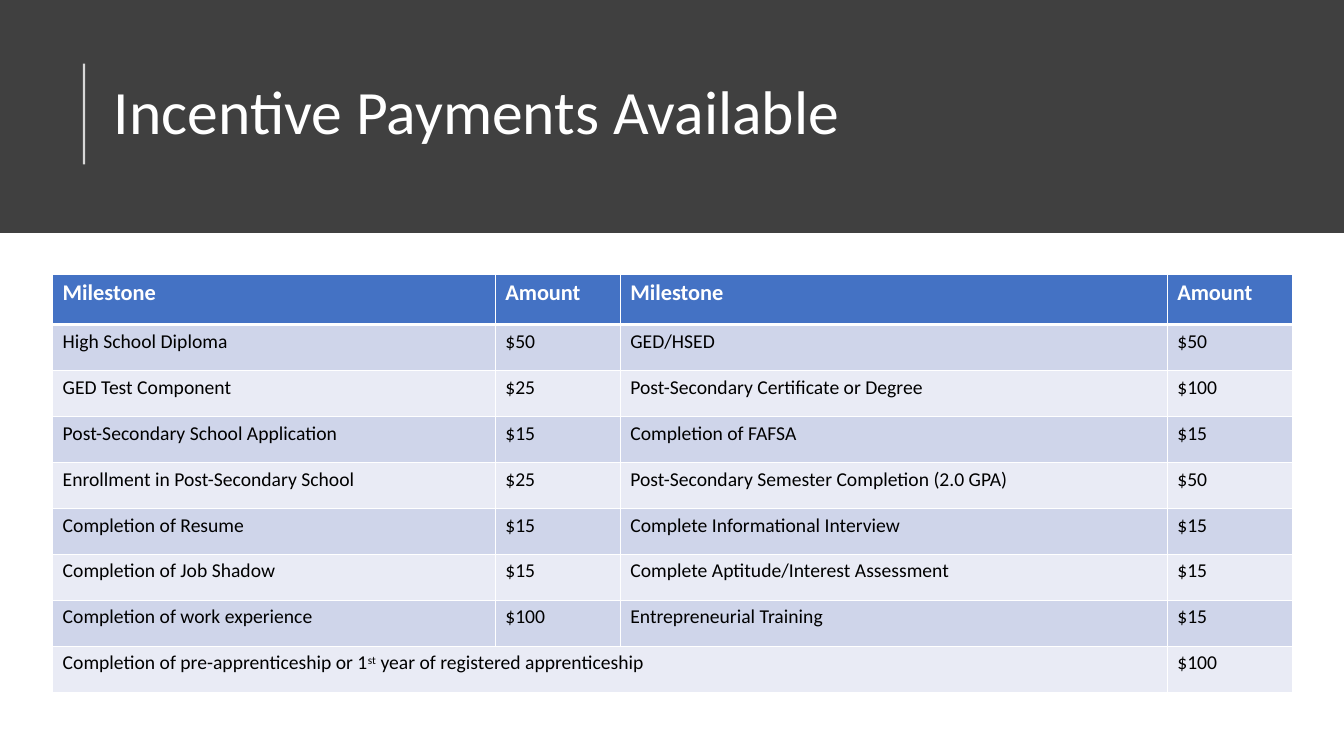
import lxml.etree
import pptx
import pptx.util
import pptx.dml.color
import pptx.enum.shapes
import pptx.enum.text
import pptx.oxml
import pptx.oxml.ns

Pt = pptx.util.Pt
RGBColor = pptx.dml.color.RGBColor
qn = pptx.oxml.ns.qn

WHITE = RGBColor(0xFF, 0xFF, 0xFF)
BLACK = RGBColor(0x00, 0x00, 0x00)
CHARCOAL = RGBColor(0x40, 0x40, 0x40)
BLUE = RGBColor(0x44, 0x72, 0xC4)
BAND_DARK = RGBColor(0xCF, 0xD5, 0xEA)
BAND_LIGHT = RGBColor(0xE9, 0xEB, 0xF5)
FONT = "Calibri"

ROWS = [
    ("Milestone", "Amount", "Milestone", "Amount"),
    ("High School Diploma", "$50", "GED/HSED", "$50"),
    ("GED Test Component", "$25", "Post-Secondary Certificate or Degree", "$100"),
    ("Post-Secondary School Application", "$15", "Completion of FAFSA", "$15"),
    ("Enrollment in Post-Secondary School", "$25",
     "Post-Secondary Semester Completion (2.0 GPA)", "$50"),
    ("Completion of Resume", "$15", "Complete Informational Interview", "$15"),
    ("Completion of Job Shadow", "$15", "Complete Aptitude/Interest Assessment", "$15"),
    ("Completion of work experience", "$100", "Entrepreneurial Training", "$15"),
    ("Completion of pre-apprenticeship or 1|st| year of registered apprenticeship",
     "", "", "$100"),
]
COL_WIDTHS = [316.2, 89.3, 390.7, 89.3]
HEADER_HEIGHT, ROW_HEIGHT = 36, 32.85


def add_run(p, text, size, color, bold=False):
    r = p.add_run()
    r.text = text
    r.font.name = FONT
    r.font.size = Pt(size)
    r.font.bold = bold
    r.font.color.rgb = color
    return r


def add_border(cell, side, width):
    ln = lxml.etree.SubElement(cell._tc.get_or_add_tcPr(), qn(f"a:ln{side}"),
                               w=str(int(Pt(width))))
    fill = lxml.etree.SubElement(ln, qn("a:solidFill"))
    lxml.etree.SubElement(fill, qn("a:srgbClr"), val=str(WHITE))


prs = pptx.Presentation()
prs.slide_width, prs.slide_height = Pt(960), Pt(540)
s = prs.slides.add_slide(prs.slide_layouts[5])

# Title
title = s.shapes.title
title.left, title.top, title.width, title.height = Pt(74.2), Pt(29.5), Pt(822.2), Pt(104.4)
tf = title.text_frame
tf.word_wrap = True
tf.vertical_anchor = pptx.enum.text.MSO_ANCHOR.MIDDLE
p = tf.paragraphs[0]
p.alignment = pptx.enum.text.PP_ALIGN.LEFT
p.line_spacing = 0.9
add_run(p, "Incentive Payments Available", 44, WHITE)

# Dark band behind the title
band = s.shapes.add_shape(pptx.enum.shapes.MSO_SHAPE.RECTANGLE, 0, 0, Pt(960), Pt(166.4))
band.shadow.inherit = False
band.fill.solid()
band.fill.fore_color.rgb = CHARCOAL
band.line.fill.background()
title._element.addprevious(band._element)

# Translucent rule beside the title
rule = s.shapes.add_connector(pptx.enum.shapes.MSO_CONNECTOR.STRAIGHT,
                              Pt(60), Pt(117.4), Pt(60), Pt(45.4))
rule.line.color.rgb = WHITE
rule.line.width = Pt(1.5)
spPr = rule._element.spPr
lxml.etree.SubElement(spPr.find(".//" + qn("a:srgbClr")), qn("a:alpha"), val="80000")
lxml.etree.SubElement(spPr, qn("a:effectLst"))

# Incentive table
table_height = HEADER_HEIGHT + ROW_HEIGHT * (len(ROWS) - 1)
table = s.shapes.add_table(len(ROWS), len(COL_WIDTHS), Pt(37.6), Pt(195.8),
                           Pt(sum(COL_WIDTHS)), Pt(table_height)).table
for column, width in zip(table.columns, COL_WIDTHS):
    column.width = Pt(width)

for i, texts in enumerate(ROWS):
    header = i == 0
    table.rows[i].height = Pt(HEADER_HEIGHT if header else ROW_HEIGHT)
    for j, text in enumerate(texts):
        cell = table.cell(i, j)
        for side in "LRTB":
            thick = (side == "B" and header) or (side == "T" and i == 1)
            add_border(cell, side, 3 if thick else 1)
        cell.fill.solid()
        cell.fill.fore_color.rgb = BLUE if header else BAND_DARK if i % 2 else BAND_LIGHT
        # Text between bars is superscript
        for k, part in enumerate(text.split("|") if text else []):
            r = add_run(cell.text_frame.paragraphs[0], part, 16 if header else 14,
                        WHITE if header else BLACK, header)
            if k % 2:
                r.font._element.set("baseline", "30000")

# The last milestone spans three columns
last = len(ROWS) - 1
table.cell(last, 0).merge(table.cell(last, 2))

prs.save("out.pptx")
